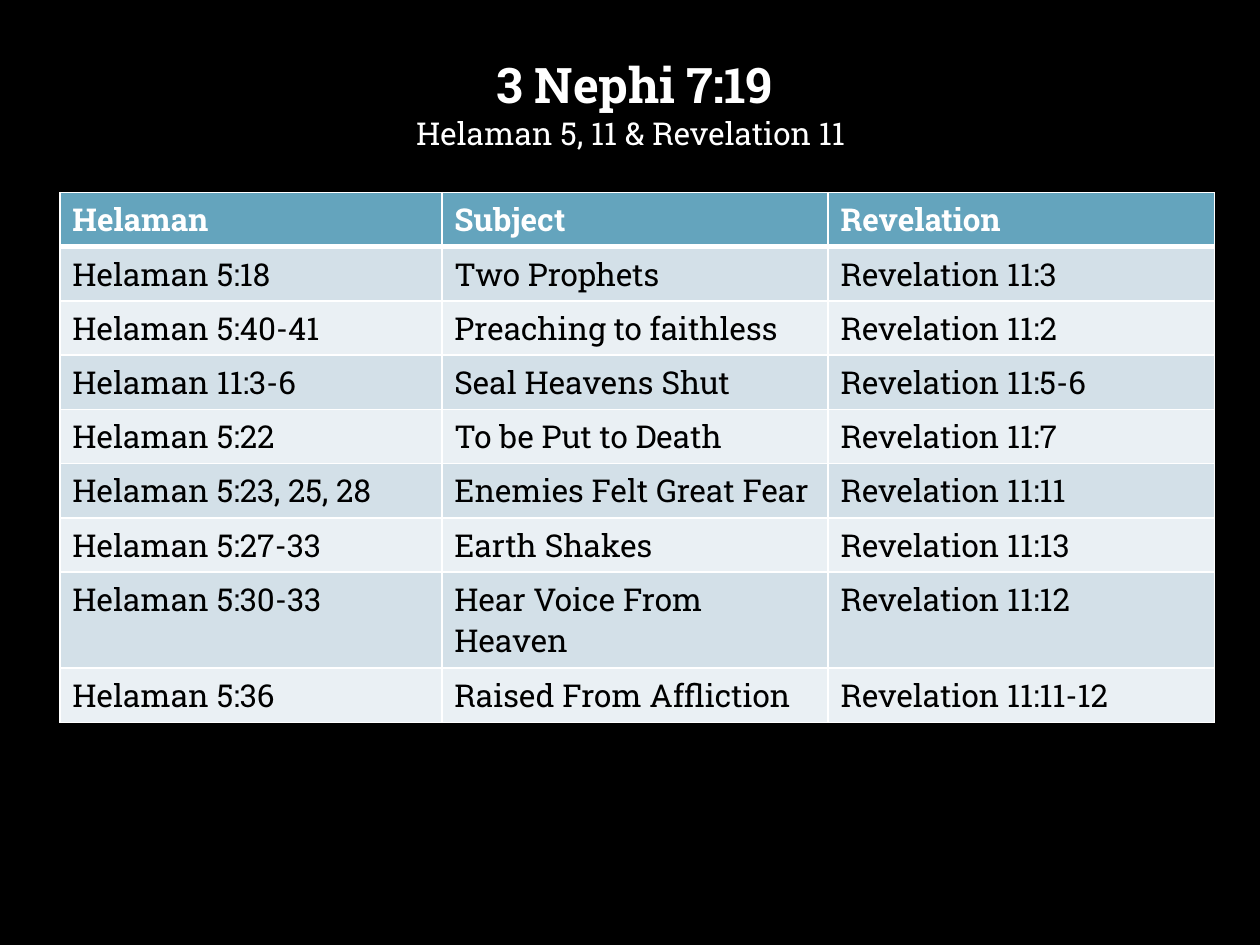
from lxml import etree
from pptx import Presentation
from pptx.dml.color import RGBColor
from pptx.enum import text
from pptx.oxml import ns
from pptx.util import Pt

COLORS = {
    "background": "000000",
    "heading": "FFFFFF",
    "passage": "000000",
    "border": "FFFFFF",
    "header_row": "64A4BD",
    "odd_row": "D3E0E8",
    "even_row": "EAF0F4",
}
FONT = "Roboto Slab"
COLUMN_WIDTHS = (218.3, 220.7, 220.7)
ROW_HEIGHT = 31
TWO_LINE_HEIGHT = 54.9
TWO_LINE_SUBJECT = "Hear Voice From Heaven"
PASSAGES = [
    ("Helaman", "Subject", "Revelation"),
    ("Helaman 5:18", "Two Prophets", "Revelation 11:3"),
    ("Helaman 5:40-41", "Preaching to faithless", "Revelation 11:2"),
    ("Helaman 11:3-6", "Seal Heavens Shut", "Revelation 11:5-6"),
    ("Helaman 5:22", "To be Put to Death", "Revelation 11:7"),
    ("Helaman 5:23, 25, 28", "Enemies Felt Great Fear", "Revelation 11:11"),
    ("Helaman 5:27-33", "Earth Shakes", "Revelation 11:13"),
    ("Helaman 5:30-33", TWO_LINE_SUBJECT, "Revelation 11:12"),
    ("Helaman 5:36", "Raised From Affliction", "Revelation 11:11-12"),
]


def rgb(name):
    return RGBColor.from_string(COLORS[name])


def write(paragraph, words, color, size=18, bold=False):
    run = paragraph.add_run()
    run.text = words
    font_format = {"name": FONT, "size": Pt(size), "bold": bold}
    for attribute, value in font_format.items():
        setattr(run.font, attribute, value)
    run.font.color.rgb = rgb(color)


def add_heading(slide):
    heading = slide.shapes.title
    place = {"left": 59.9, "top": 27.8, "width": 605.5, "height": 63.4}
    for attribute, value in place.items():
        setattr(heading, attribute, Pt(value))

    frame = heading.text_frame
    frame_format = {
        "word_wrap": True,
        "auto_size": text.MSO_AUTO_SIZE.SHAPE_TO_FIT_TEXT,
        "vertical_anchor": text.MSO_ANCHOR.TOP,
    }
    for attribute, value in frame_format.items():
        setattr(frame, attribute, value)

    reference, related = frame.paragraphs[0], frame.add_paragraph()
    write(reference, "3 Nephi 7:19", "heading", size=28, bold=True)
    write(related, "Helaman 5, 11 & Revelation 11 ", "heading")
    for paragraph in (reference, related):
        paragraph.alignment = text.PP_ALIGN.CENTER
        paragraph.space_before = Pt(0)


def set_borders(cell, widths):
    properties = cell._tc.get_or_add_tcPr()
    for side, width in widths.items():
        line = etree.SubElement(properties, ns.qn(f"a:ln{side}"), w=str(Pt(width)))
        fill = etree.SubElement(line, ns.qn("a:solidFill"))
        etree.SubElement(fill, ns.qn("a:srgbClr"), val=COLORS["border"])


def format_cell(cell, words, row):
    is_header = row == 0
    # Borders come before the fill in the cell properties
    set_borders(cell, {"L": 1, "R": 1,
                       "T": 3 if row == 1 else 1,
                       "B": 3 if is_header else 1})
    band = "header_row" if is_header else "odd_row" if row % 2 else "even_row"
    cell.fill.solid()
    cell.fill.fore_color.rgb = rgb(band)
    write(cell.text_frame.paragraphs[0], words,
          "heading" if is_header else "passage", bold=is_header)


def add_passage_table(slide):
    heights = [TWO_LINE_HEIGHT if TWO_LINE_SUBJECT in passages else ROW_HEIGHT
               for passages in PASSAGES]
    table = slide.shapes.add_table(
        len(PASSAGES), len(COLUMN_WIDTHS), Pt(34.2), Pt(110),
        Pt(sum(COLUMN_WIDTHS)), Pt(sum(heights))).table
    for column, width in zip(table.columns, COLUMN_WIDTHS):
        column.width = Pt(width)
    for row, passages in enumerate(PASSAGES):
        table.rows[row].height = Pt(heights[row])
        for column, words in enumerate(passages):
            format_cell(table.cell(row, column), words, row)


def main():
    deck = Presentation()
    deck.slide_width, deck.slide_height = Pt(720), Pt(540)
    slide = deck.slides.add_slide(deck.slide_layouts.get_by_name("Title Only"))

    # Background
    slide.background.fill.solid()
    slide.background.fill.fore_color.rgb = rgb("background")

    # Content
    add_heading(slide)
    add_passage_table(slide)
    deck.save("out.pptx")


if __name__ == "__main__":
    main()
